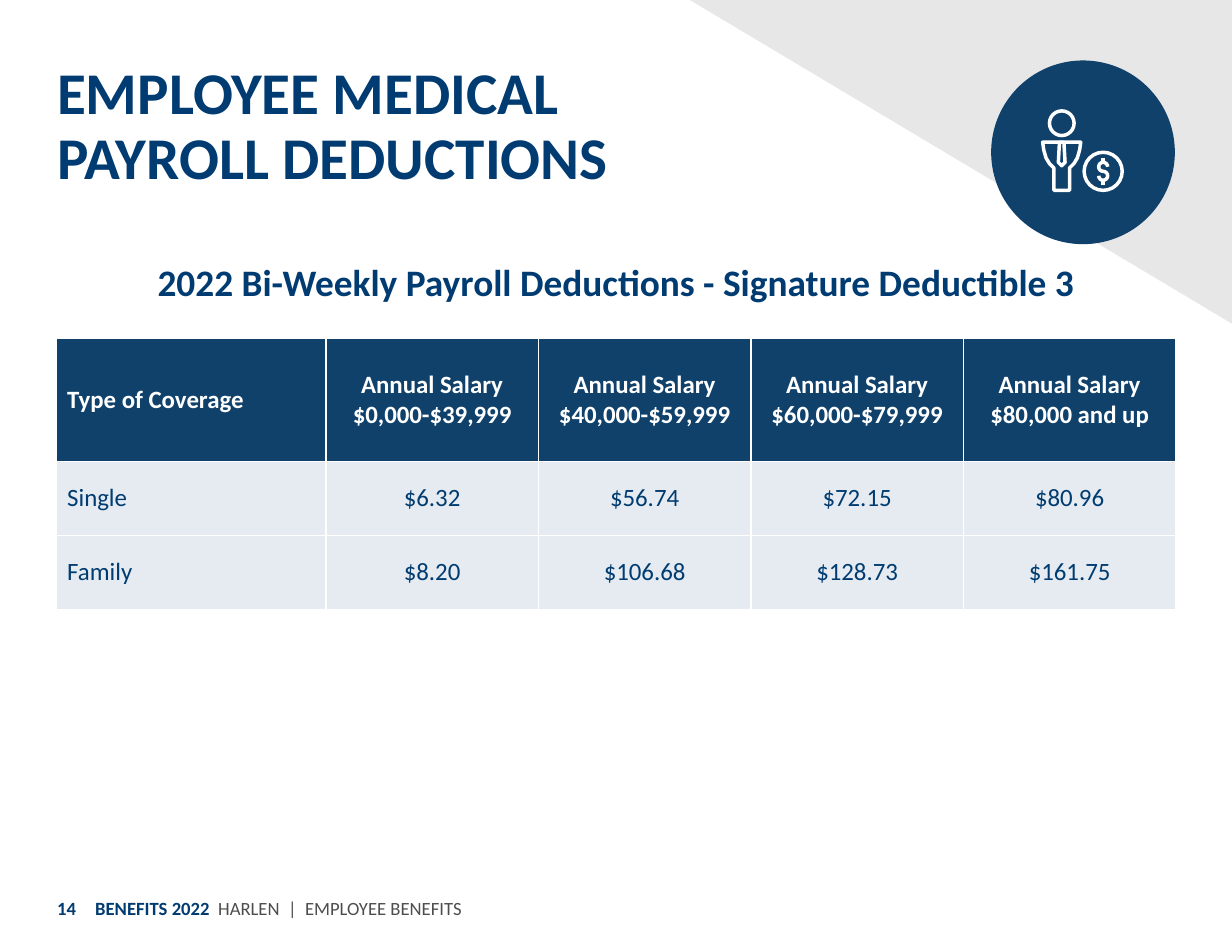
from math import cos, radians, sin

from lxml.etree import SubElement
from pptx import Presentation
from pptx.dml.color import RGBColor
from pptx.enum.shapes import MSO_CONNECTOR, MSO_SHAPE
from pptx.enum.text import MSO_ANCHOR, MSO_AUTO_SIZE, PP_ALIGN
from pptx.oxml.ns import qn
from pptx.util import Inches, Pt

NAVY = RGBColor(0x00, 0x3B, 0x71)
CELL_BLUE = RGBColor(0x00, 0x3C, 0x71)
DEEP_BLUE = RGBColor(0x10, 0x41, 0x6B)
LIGHT_GREY = RGBColor(0xE8, 0xE7, 0xE8)
DARK_GREY = RGBColor(0x4D, 0x4D, 0x4E)
WHITE = RGBColor(0xFF, 0xFF, 0xFF)
FONT = "Calibri"

TITLE = "EMPLOYEE MEDICAL\vPAYROLL DEDUCTIONS"
SUBTITLE = "2022 Bi-Weekly Payroll Deductions - Signature Deductible 3"
ROWS = [
    ["Type of Coverage", "Annual Salary\n$0,000-$39,999", "Annual Salary\n$40,000-$59,999",
     "Annual Salary\n$60,000-$79,999", "Annual Salary\n$80,000 and up"],
    ["Single", "$6.32", "$56.74", "$72.15", "$80.96"],
    ["Family", "$8.20", "$106.68", "$128.73", "$161.75"],
]
PAGE_NUMBER = [("14", NAVY, True)]
FOOTER = [("BENEFITS 2022\u00a0 ", NAVY, True),
          ("HARLEN\u00a0 |\u00a0 EMPLOYEE BENEFITS", DARK_GREY, False)]

PAGE_WIDTH, PAGE_HEIGHT = 11, 8.5
MARGIN = 0.5
CONTENT_WIDTH = PAGE_WIDTH - 2 * MARGIN
LABEL_WIDTH = 2.41
AMOUNT_WIDTH = (CONTENT_WIDTH - LABEL_WIDTH) / 4
ROW_HEIGHTS = [1.1, 0.66, 0.66]
TABLE_TOP = 3.02
FOOTER_TOP, FOOTER_HEIGHT = 7.88, 0.45
STROKE = Pt(2.25)
PERSON_X = 9.48
COIN_X, COIN_Y = 9.85, 1.53


def set_font(font, size, color, bold):
    font.name, font.size, font.bold = FONT, Pt(size), bold
    font.color.rgb = color


def add_solid(shapes, kind, left, top, width, height, color):
    shape = shapes.add_shape(kind, Inches(left), Inches(top), Inches(width), Inches(height))
    shape.shadow.inherit = False
    shape.fill.solid()
    shape.fill.fore_color.rgb = color
    shape.line.fill.background()
    return shape


def outline(shape):
    shape.shadow.inherit = False
    shape.fill.background()
    shape.line.color.rgb = WHITE
    shape.line.width = STROKE


def add_ring(shapes, x, y, radius):
    outline(shapes.add_shape(MSO_SHAPE.OVAL, Inches(x - radius), Inches(y - radius),
                             Inches(2 * radius), Inches(2 * radius)))


def add_outline(shapes, points, close=True):
    points = [(Inches(x), Inches(y)) for x, y in points]
    builder = shapes.build_freeform(*points[0])
    builder.add_line_segments(points[1:], close=close)
    outline(builder.convert_to_shape())


def arc(x, y, radius, start, stop):
    steps = 12
    angles = [radians(start + (stop - start) * step / steps) for step in range(steps + 1)]
    return [(x + radius * cos(angle), y + radius * sin(angle)) for angle in angles]


def mirrored(right_side):
    return right_side + [(2 * PERSON_X - x, y) for x, y in reversed(right_side)]


def add_icon(slide):
    shapes = slide.shapes.add_group_shape().shapes
    add_ring(shapes, COIN_X, COIN_Y, 0.17)
    top = arc(COIN_X, COIN_Y - 0.04, 0.04, 0, -270)
    bottom = arc(COIN_X, COIN_Y + 0.04, 0.04, -90, 180)
    add_outline(shapes, top + bottom[1:], close=False)
    for start in (COIN_Y - 0.12, COIN_Y + 0.08):
        bar = shapes.add_connector(MSO_CONNECTOR.STRAIGHT, Inches(COIN_X), Inches(start),
                                   Inches(COIN_X), Inches(start + 0.04))
        bar.line.color.rgb = WHITE
        bar.line.width = STROKE
        SubElement(bar._element.spPr, qn("a:effectLst"))
    add_ring(shapes, PERSON_X, 1.1, 0.11)
    add_outline(shapes, mirrored([(9.65, 1.27), (9.64, 1.34), (9.62, 1.41), (9.59, 1.46),
                                  (9.55, 1.5), (9.55, 1.7)]))
    add_outline(shapes, mirrored([(9.5, 1.27), (9.51, 1.45), (PERSON_X, 1.48)]))


def add_text(slide, left, top, width, height, inset=0):
    box = slide.shapes.add_textbox(Inches(left), Inches(top), Inches(width), Inches(height))
    frame = box.text_frame
    frame.word_wrap = True
    frame.margin_left = frame.margin_right = 0
    frame.margin_top = frame.margin_bottom = Inches(inset)
    return frame


def add_footer(slide, left, width, spans):
    frame = add_text(slide, left, FOOTER_TOP, width, FOOTER_HEIGHT, 0.05)
    frame.vertical_anchor = MSO_ANCHOR.MIDDLE
    for text, color, bold in spans:
        span = frame.paragraphs[0].add_run()
        span.text = text
        set_font(span.font, 12, color, bold)


def add_title(slide):
    title = slide.shapes.title
    title.left, title.top = Inches(MARGIN + 0.01), Inches(0.54)
    title.width, title.height = Inches(8.1), Inches(1.18)
    frame = title.text_frame
    frame.text = TITLE
    frame.auto_size = MSO_AUTO_SIZE.NONE
    frame.vertical_anchor = MSO_ANCHOR.TOP
    frame.margin_left = frame.margin_right = frame.margin_top = frame.margin_bottom = 0
    para = frame.paragraphs[0]
    para.alignment = PP_ALIGN.LEFT
    para.line_spacing = Pt(42)
    set_font(para.font, 38, NAVY, True)


def format_cell(cell, is_header, is_label):
    properties = cell._tc.get_or_add_tcPr()
    for side in ("a:lnL", "a:lnR", "a:lnT", "a:lnB"):
        border = SubElement(properties, qn(side), w=str(Pt(1)))
        paint = SubElement(border, qn("a:solidFill"))
        SubElement(paint, qn("a:srgbClr"), val=str(WHITE))
    cell.fill.solid()
    cell.fill.fore_color.rgb = DEEP_BLUE if is_header else CELL_BLUE
    if not is_header:
        color = properties.find(qn("a:solidFill")).find(qn("a:srgbClr"))
        SubElement(color, qn("a:alpha"), val="10000")
    cell.vertical_anchor = MSO_ANCHOR.MIDDLE
    cell.margin_left = Inches(0.1 if is_label else 0)
    cell.margin_right = cell.margin_top = cell.margin_bottom = 0
    for para in cell.text_frame.paragraphs:
        para.alignment = PP_ALIGN.LEFT if is_label else PP_ALIGN.CENTER
        set_font(para.font, 16, WHITE if is_header else CELL_BLUE, is_header)


def add_deductions(slide):
    table = slide.shapes.add_table(len(ROWS), len(ROWS[0]), Inches(MARGIN), Inches(TABLE_TOP),
                                   Inches(CONTENT_WIDTH), Inches(sum(ROW_HEIGHTS))).table
    for index, column in enumerate(table.columns):
        column.width = Inches(AMOUNT_WIDTH if index else LABEL_WIDTH)
    for row_index, (texts, height) in enumerate(zip(ROWS, ROW_HEIGHTS)):
        table.rows[row_index].height = Inches(height)
        for column_index, text in enumerate(texts):
            cell = table.cell(row_index, column_index)
            cell.text = text
            format_cell(cell, row_index == 0, column_index == 0)


def main():
    deck = Presentation()
    deck.slide_width, deck.slide_height = Inches(PAGE_WIDTH), Inches(PAGE_HEIGHT)
    slide = deck.slides.add_slide(deck.slide_layouts[5])
    corner = add_solid(slide.shapes, MSO_SHAPE.RIGHT_TRIANGLE, 6.16, 0, 4.84, 2.89, LIGHT_GREY)
    corner.rotation = 180
    add_deductions(slide)
    add_title(slide)
    add_solid(slide.shapes, MSO_SHAPE.OVAL, 8.85, 0.54, 1.64, 1.64, DEEP_BLUE)
    para = add_text(slide, MARGIN, 2.31, CONTENT_WIDTH, 0.47).paragraphs[0]
    para.text = SUBTITLE
    para.alignment = PP_ALIGN.CENTER
    set_font(para.font, 24, NAVY, True)
    add_icon(slide)
    add_footer(slide, 0.85, 4.39, FOOTER)
    add_footer(slide, 0.51, 0.49, PAGE_NUMBER)
    deck.save("out.pptx")


if __name__ == "__main__":
    main()
